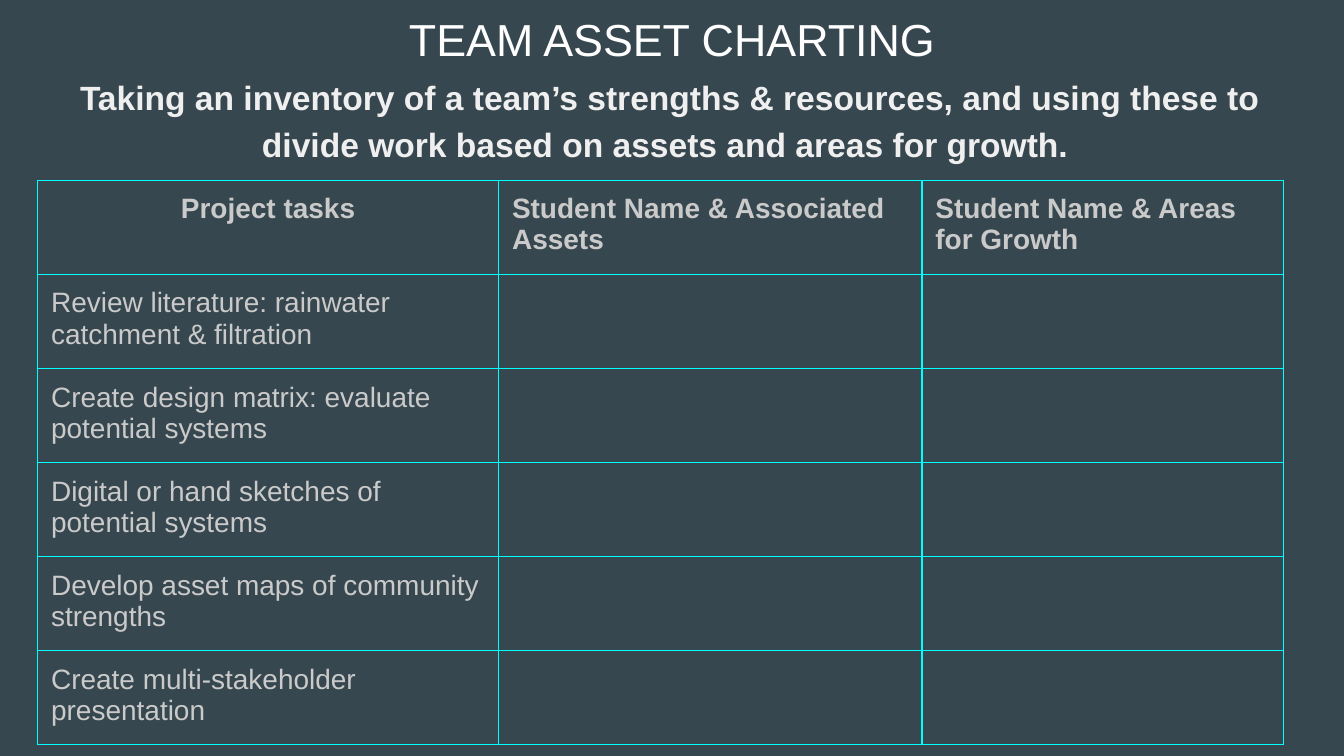
"""Build the team asset charting slide with its task table."""
import pptx
import pptx.dml.color
import pptx.enum.text
import pptx.oxml
import pptx.oxml.ns
import pptx.util

COLORS = {
    "background": "37474F",
    "title": "FFFFFF",
    "subtitle": "EFEFEF",
    "table": "CACACA",
    "border": "00FFFF",
}
INCH = pptx.util.Inches(1)
CENTER = pptx.enum.text.PP_ALIGN.CENTER
LEFT = pptx.enum.text.PP_ALIGN.LEFT
INSET = pptx.util.Inches(0.1)


def write_text(holder, text, size, color, bold=False, align=LEFT, spacing=None):
    holder.margin_left = holder.margin_right = INSET
    holder.margin_top = holder.margin_bottom = INSET
    frame = getattr(holder, "text_frame", holder)
    paragraph = frame.paragraphs[0]
    paragraph.alignment = align
    paragraph.line_spacing = spacing
    if text:
        run = paragraph.add_run()
        run.text = text
        run.font.name = "Arial"
        run.font.size = pptx.util.Pt(size)
        run.font.bold = bold
        run.font.color.rgb = pptx.dml.color.RGBColor.from_string(COLORS[color])


presentation = pptx.Presentation()
presentation.slide_width = 10 * INCH
presentation.slide_height = presentation.slide_width * 9 // 16
slide = presentation.slides.add_slide(presentation.slide_layouts[6])
slide.background.fill.solid()
slide.background.fill.fore_color.rgb = pptx.dml.color.RGBColor.from_string(COLORS["background"])

title = slide.shapes.add_textbox(*(int(length * INCH) for length in (0.34, -0.01, 9.32, 0.63)))
title.text_frame.word_wrap = True
write_text(title.text_frame, "TEAM ASSET CHARTING", size=24, color="title", align=CENTER)

headings = ["Project tasks", "Student Name & Associated Assets", "Student Name & Areas for Growth"]
tasks = [
    "Review literature: rainwater catchment & filtration",
    "Create design matrix: evaluate potential systems",
    "Digital or hand sketches of potential systems",
    "Develop asset maps of community strengths",
    "Create multi-stakeholder presentation",
]
rows = [headings] + [[task, "", ""] for task in tasks]
column_widths = [3.43, 3.15, 2.69]
row_height = 0.42
table_side = int(3.28 * INCH)

table_frame = slide.shapes.add_table(
    len(rows), len(headings), int(0.28 * INCH), int(1.34 * INCH), table_side, table_side
)
table = table_frame.table
table.first_row = False
table.horz_banding = False
for column, width in zip(table.columns, column_widths):
    column.width = int(width * INCH)

for row_index, texts in enumerate(rows):
    table.rows[row_index].height = int(row_height * INCH)
    for column_index, text in enumerate(texts):
        cell = table.cell(row_index, column_index)
        properties = cell._tc.get_or_add_tcPr()
        for side in ("lnL", "lnR", "lnT", "lnB"):
            properties.append(pptx.oxml.parse_xml(
                f'<a:{side} {pptx.oxml.ns.nsdecls("a")} w="{pptx.util.Pt(0.75)}">'
                f'<a:solidFill><a:srgbClr val="{COLORS["border"]}"/></a:solidFill></a:{side}>'
            ))
        cell.fill.background()
        is_heading = row_index == 0
        align = CENTER if is_heading and column_index == 0 else LEFT
        write_text(cell, text, size=15, color="table", bold=is_heading, align=align)

table_frame.width = table_frame.height = table_side

subtitle = slide.shapes.add_textbox(*(int(length * INCH) for length in (0.11, 0.43, 9.75, 0.79)))
subtitle.text_frame.word_wrap = True
write_text(
    subtitle.text_frame,
    "Taking an inventory of a team’s strengths & resources, and using these to "
    "divide work based on assets and areas for growth. ",
    size=18, color="subtitle", bold=True, align=CENTER, spacing=1.15,
)

presentation.save("out.pptx")
